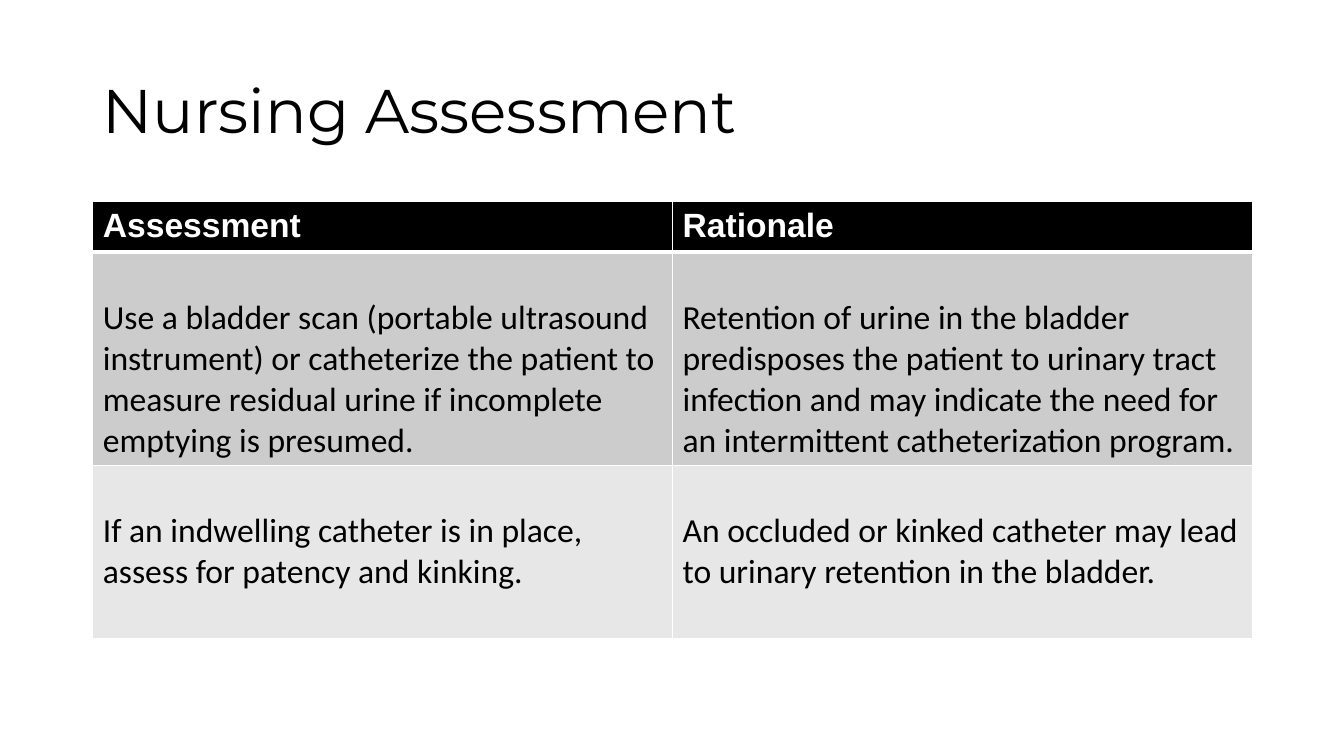
from lxml import etree
from pptx import Presentation
from pptx.dml.color import RGBColor
from pptx.enum.text import MSO_ANCHOR
from pptx.oxml.ns import qn
from pptx.util import Inches, Pt

MIDDLE = MSO_ANCHOR.MIDDLE

# Content
HEADING = "Nursing Assessment"
ASSESSMENTS = [
    ("Assessment", "Rationale"),
    ("Use a bladder scan (portable ultrasound instrument) or catheterize the "
     "patient to measure residual urine if incomplete emptying is presumed.",
     "Retention of urine in the bladder predisposes the patient to urinary tract "
     "infection and may indicate the need for an intermittent catheterization program."),
    ("If an indwelling catheter is in place, assess for patency and kinking.",
     "An occluded or kinked catheter may lead to urinary retention in the bladder."),
]

# Layout and style
LEFT, WIDTH = 0.92, 11.5
TABLE_TOP = 2
ROW_HEIGHTS = [0.48, 2.12, 1.72]
ROW_FILLS = ["000000", "CCCCCC", "E7E7E7"]
BLACK, WHITE = "000000", "FFFFFF"


def rgb(color):
    return RGBColor.from_string(color)


def style(paragraph, font_name, size, color, bold=False):
    font = paragraph.font
    font.name, font.size, font.bold = font_name, Pt(size), bold
    font.color.rgb = rgb(color)


def add_borders(cell, bottom, top):
    """Put white borders, in points, before the cell's fill."""
    properties = cell._tc.get_or_add_tcPr()
    widths = [("a:lnL", 1), ("a:lnR", 1), ("a:lnT", top), ("a:lnB", bottom)]
    for position, (tag, points) in enumerate(widths):
        line = etree.Element(qn(tag), w=str(Pt(points)))
        fill = etree.SubElement(line, qn("a:solidFill"))
        etree.SubElement(fill, qn("a:srgbClr"), val=WHITE)
        properties.insert(position, line)


prs = Presentation()
prs.slide_width, prs.slide_height = Inches(13.33), Inches(7.5)
slide = prs.slides.add_slide(prs.slide_layouts[6])

# Heading
heading = slide.shapes.add_textbox(
    Inches(LEFT), Inches(0.4), Inches(WIDTH), Inches(1.45)).text_frame
heading.word_wrap = True
heading.vertical_anchor = MIDDLE
heading.text = HEADING
heading.paragraphs[0].line_spacing = 0.9
style(heading.paragraphs[0], "Montserrat", 44, BLACK)

# Assessment table
table = slide.shapes.add_table(
    len(ASSESSMENTS), len(ASSESSMENTS[0]), Inches(LEFT), Inches(TABLE_TOP),
    Inches(WIDTH), Inches(sum(ROW_HEIGHTS))).table
for row, (texts, height, fill) in enumerate(zip(ASSESSMENTS, ROW_HEIGHTS, ROW_FILLS)):
    is_header = row == 0
    table.rows[row].height = Inches(height)
    for column, text in enumerate(texts):
        cell = table.cell(row, column)
        cell.text = text
        cell.margin_left = cell.margin_right = Inches(0.1)
        cell.margin_top = Inches(0.05 if is_header else 0.45)
        cell.margin_bottom = Inches(0.05)
        cell.fill.solid()
        cell.fill.fore_color.rgb = rgb(fill)
        add_borders(cell, bottom=3 if is_header else 1, top=3 if row == 1 else 1)
        if is_header:
            style(cell.text_frame.paragraphs[0], "Arial", 24, WHITE, bold=True)
        else:
            style(cell.text_frame.paragraphs[0], "Calibri", 24, BLACK)

prs.save("out.pptx")
